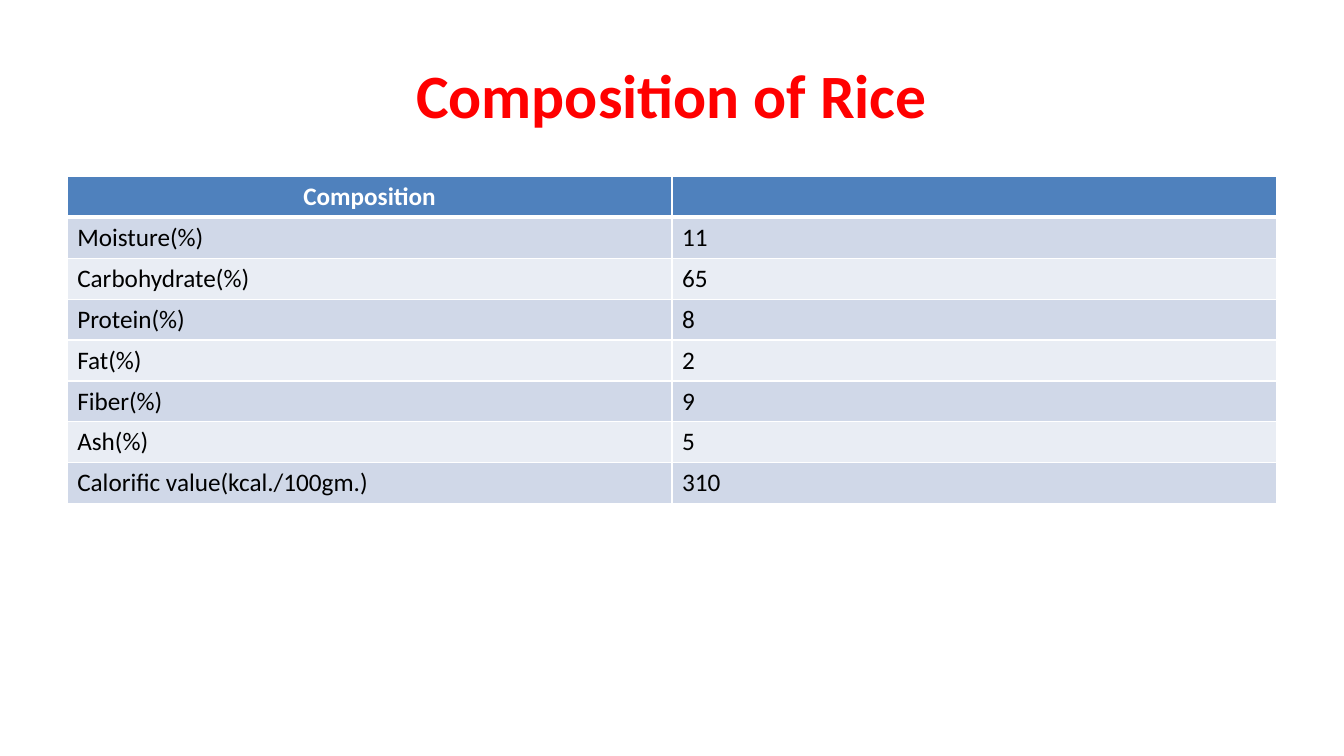
from dataclasses import dataclass

from lxml.etree import SubElement
from pptx import Presentation
from pptx.dml.color import RGBColor
from pptx.enum.text import MSO_ANCHOR as Anchor, PP_ALIGN as Align
from pptx.oxml.ns import qn
from pptx.table import _Cell as Cell
from pptx.text.text import _Paragraph as Paragraph
from pptx.util import Emu, Pt

PX = 9525
RED = RGBColor(0xFF, 0x00, 0x00)
WHITE = RGBColor(0xFF, 0xFF, 0xFF)
BLACK = RGBColor(0x00, 0x00, 0x00)
HEADER_BLUE = RGBColor(0x4F, 0x81, 0xBD)
BANDS = (RGBColor(0xE9, 0xED, 0xF4), RGBColor(0xD0, 0xD8, 0xE8))

TITLE_FONT = {"name": "Calibri", "size": Pt(44), "bold": True}
HEADER_FONT = {"name": "Calibri", "size": Pt(18), "bold": True}
BODY_FONT = {"name": "Calibri", "size": Pt(18), "bold": False}

LEFT, WIDTH = 64, 1152
TITLE_TOP, TITLE_HEIGHT = 29, 120
TABLE_TOP, ROW_HEIGHT = 168, 39


@dataclass(frozen=True)
class Component:
    label: str
    amount: str


HEADER = Component("Composition", "")
COMPONENTS = [
    Component("Moisture(%)", "11"),
    Component("Carbohydrate(%)", "65"),
    Component("Protein(%)", "8"),
    Component("Fat(%)", "2"),
    Component("Fiber(%)", "9"),
    Component("Ash(%)", "5"),
    Component("Calorific value(kcal./100gm.)", "310"),
]


def px(length: int) -> Emu:
    return Emu(length * PX)


def write(paragraph: Paragraph, text: str, font: dict, color: RGBColor, align: Align) -> None:
    paragraph.alignment = align
    if not text:
        return
    run = paragraph.add_run()
    run.text = text
    for attribute, value in font.items():
        setattr(run.font, attribute, value)
    run.font.color.rgb = color


def add_borders(cell: Cell, top: int, bottom: int) -> None:
    """Draw white cell borders; top and bottom widths are in points."""
    properties = cell._tc.get_or_add_tcPr()
    for side, points in {"lnL": 1, "lnR": 1, "lnT": top, "lnB": bottom}.items():
        line = SubElement(properties, qn(f"a:{side}"), w=str(Pt(points)))
        fill = SubElement(line, qn("a:solidFill"))
        SubElement(fill, qn("a:srgbClr"), val=str(WHITE))


def style_cell(cell: Cell, text: str, row: int) -> None:
    is_header = row == 0
    add_borders(cell, top=3 if row == 1 else 1, bottom=3 if is_header else 1)
    cell.fill.solid()
    cell.fill.fore_color.rgb = HEADER_BLUE if is_header else BANDS[row % 2]
    paragraph = cell.text_frame.paragraphs[0]
    if is_header:
        write(paragraph, text, HEADER_FONT, WHITE, Align.CENTER)
    else:
        write(paragraph, text, BODY_FONT, BLACK, Align.LEFT)


def main() -> None:
    deck = Presentation()
    deck.slide_width, deck.slide_height = px(1280), px(720)
    slide = deck.slides.add_slide(deck.slide_layouts[5])

    title = slide.shapes.title
    title.left, title.top = px(LEFT), px(TITLE_TOP)
    title.width, title.height = px(WIDTH), px(TITLE_HEIGHT)
    title.text_frame.vertical_anchor = Anchor.MIDDLE
    write(title.text_frame.paragraphs[0], "Composition of Rice", TITLE_FONT, RED, Align.CENTER)

    entries = [HEADER, *COMPONENTS]
    composition = slide.shapes.add_table(
        len(entries), 2, px(LEFT), px(TABLE_TOP), px(WIDTH), px(ROW_HEIGHT * len(entries))
    ).table
    for row, entry in enumerate(entries):
        for column, text in enumerate((entry.label, entry.amount)):
            style_cell(composition.cell(row, column), text, row)

    deck.save("out.pptx")


if __name__ == "__main__":
    main()
